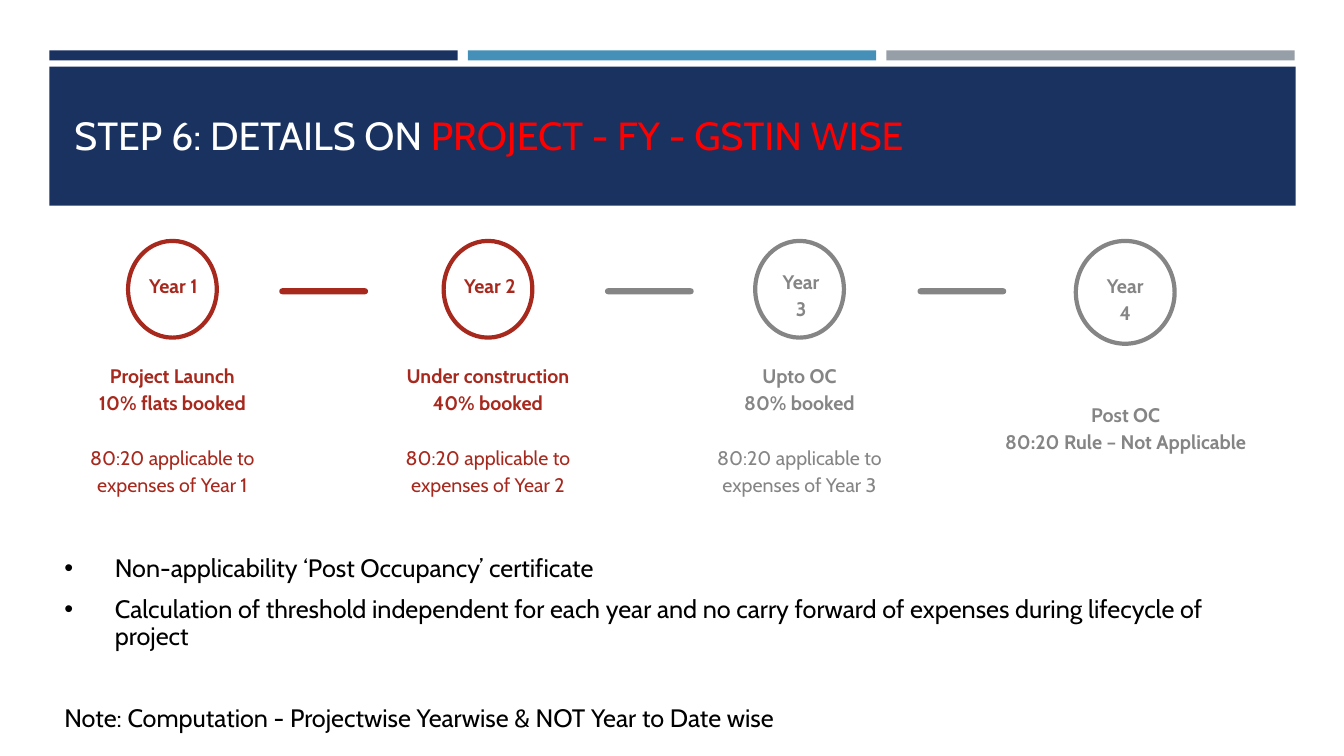
from pptx import Presentation
from pptx.dml.color import RGBColor
from pptx.enum.shapes import MSO_SHAPE
from pptx.enum.text import MSO_ANCHOR, PP_ALIGN
from pptx.util import Inches, Pt
from lxml.etree import SubElement
from pptx.oxml.ns import qn

theme = {
    "font": "Cabin",
    "navy": "1A3260", "blue": "4590B8", "steel": "969FA7",
    "red": "A7291E", "grey": "858585", "alert": "FF0000",
    "white": "FFFFFF", "black": "000000",
    "title": 28, "label": 14, "body": 18,
}

deck = Presentation()
deck.slide_width, deck.slide_height = Inches(13.33), Inches(7.5)
slide = deck.slides.add_slide(deck.slide_layouts[6])


def draw(kind, box, fill=None, line=None):
    shape = slide.shapes.add_shape(kind, *[Inches(v) for v in box])
    shape.shadow.inherit = False
    if fill:
        shape.fill.solid()
        shape.fill.fore_color.rgb = RGBColor.from_string(theme[fill])
    else:
        shape.fill.background()
    if line:
        shape.line.color.rgb = RGBColor.from_string(theme[line])
        shape.line.width = Pt(3)
    else:
        shape.line.fill.background()
    return shape


def write(box, paras, size, inset=None, anchor=MSO_ANCHOR.TOP, **form):
    """Each paragraph is a list of (text, colour, bold) runs."""
    frame = slide.shapes.add_textbox(*[Inches(v) for v in box]).text_frame
    frame.word_wrap = True
    frame.vertical_anchor = anchor
    if inset:
        for side in ("left", "top", "right", "bottom"):
            setattr(frame, "margin_" + side, Inches(inset))
    for i, runs in enumerate(paras):
        para = frame.add_paragraph() if i else frame.paragraphs[0]
        for key, value in form.items():
            setattr(para, key, value)
        for text, color, bold in runs:
            run = para.add_run()
            run.text = text
            look = {"name": theme["font"], "size": Pt(theme[size]), "bold": bold}
            for key, value in look.items():
                setattr(run.font, key, value)
            run.font.color.rgb = RGBColor.from_string(theme[color])
    return frame


# Header: three strips above the title band
for i, color in enumerate(("navy", "blue", "steel")):
    draw(MSO_SHAPE.RECTANGLE, (0.49 + i * 4.15, 0.5, 4.05, 0.1), color)
draw(MSO_SHAPE.RECTANGLE, (0.49, 0.66, 12.36, 1.38), "navy")
write((0.64, 0.8, 12.06, 1.08),
      [[("STEP 6: DETAILS ON ", "white", False),
        ("PROJECT - FY - GSTIN WISE", "alert", False)]],
      "title", anchor=MSO_ANCHOR.MIDDLE)

# Timeline: colour, circle box, year box, heading box, heading lines, rule
stages = [
    ("red", (1.27, 2.39, 0.88, 0.96), (1.33, 2.55, 0.78, 0.44),
     (0.44, 3.52, 2.54, 0.72), ("Project Launch", "10% flats booked"), True),
    ("red", (4.4, 2.39, 0.88, 0.96), (4.46, 2.55, 0.8, 0.52),
     (3.57, 3.52, 2.54, 0.72), ("Under construction", "40% booked"), True),
    ("grey", (7.49, 2.39, 0.88, 0.96), (7.57, 2.51, 0.75, 0.56),
     (6.66, 3.52, 2.54, 0.72), ("Upto OC", "80% booked"), True),
    ("grey", (10.67, 2.39, 0.98, 1.02), (10.8, 2.55, 0.72, 0.63),
     (9.76, 3.76, 2.81, 0.87), ("Post OC", "80:20 Rule – Not Applicable"), False),
]
label = {"size": "label", "inset": 0.13,
         "alignment": PP_ALIGN.CENTER, "line_spacing": 1.15}
for num, (color, ring, spot, head, lines, rule) in enumerate(stages, 1):
    draw(MSO_SHAPE.OVAL, ring, line=color)
    write(spot, [[(f"Year {num}", color, True)]], **label)
    write(head, [[(line, color, True)] for line in lines],
          anchor=MSO_ANCHOR.BOTTOM, **label)
    if rule:
        text = f"80:20 applicable to expenses of Year {num}"
        write((head[0], 4.26, 2.54, 0.81), [[(text, color, False)]], **label)

# Dashes between the stages
for left, color in ((2.77, "red"), (6, "grey"), (9.1, "grey")):
    dash = draw(MSO_SHAPE.ROUNDED_RECTANGLE, (left, 2.86, 0.88, 0.06), color)
    dash.adjustments[0] = 0.5

# Bullets and closing note
points = [
    "Non-applicability ‘Post Occupancy’ certificate",
    "Calculation of threshold independent for each year and no carry forward "
    "of expenses during lifecycle of project",
    "Note: Computation - Projectwise Yearwise & NOT Year to Date wise",
]
body = write((0.54, 5.46, 12.03, 1.61),
             [[(point, "black", False)] for point in points],
             "body", line_spacing=0.9, space_before=Pt(10))
*items, note = body.paragraphs
for item in items:
    props = item._p.get_or_add_pPr()
    props.set("marL", str(Inches(0.5)))
    props.set("indent", str(Inches(-0.5)))
    SubElement(props, qn("a:buFont"), typeface="Arial")
    SubElement(props, qn("a:buChar"), char="•")
note.space_before = Pt(39)

deck.save("out.pptx")
